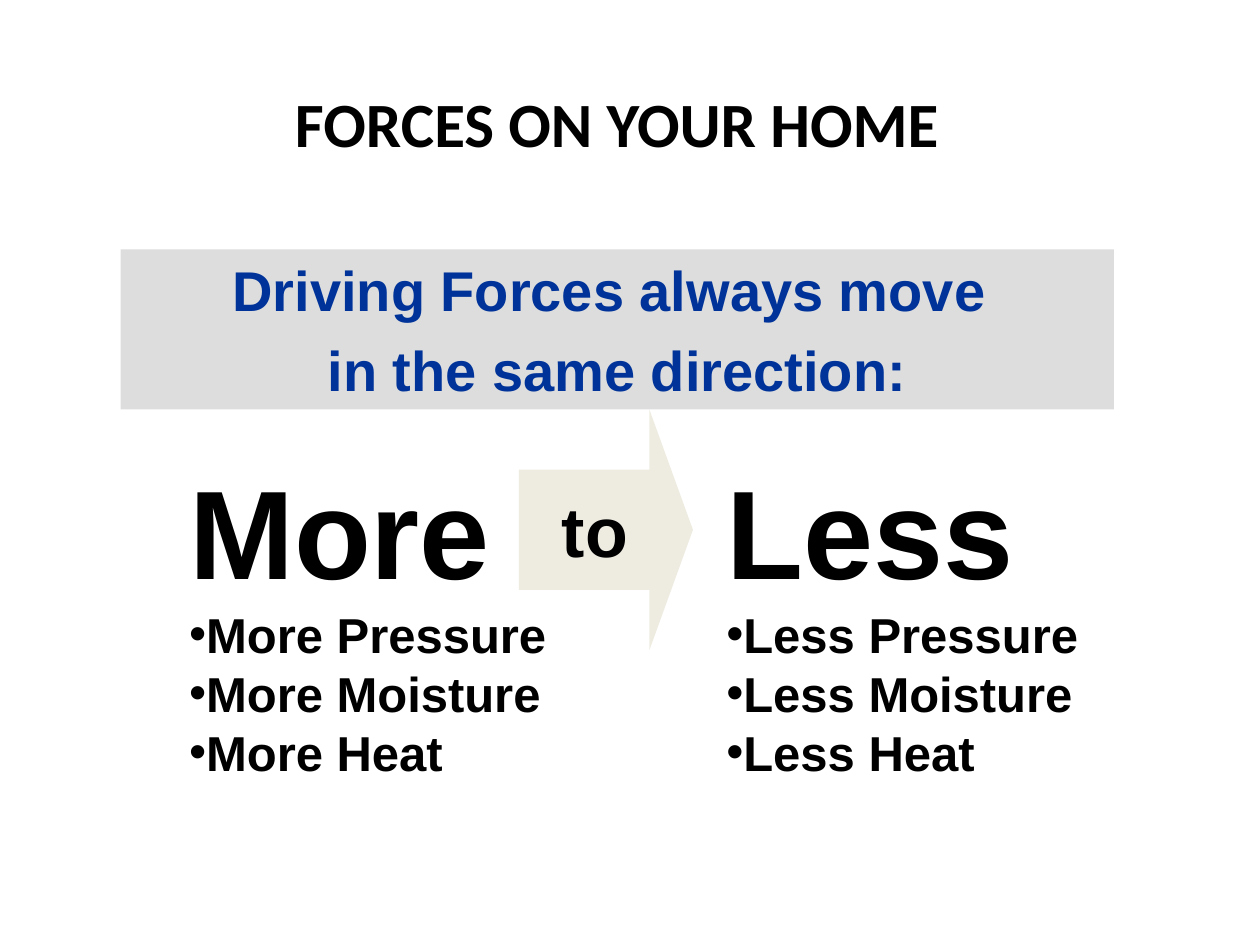
"""Build the slide on how driving forces move from more to less."""
from lxml import etree
from pptx import Presentation
from pptx.dml.color import RGBColor
from pptx.enum.shapes import MSO_SHAPE as Shape
from pptx.enum.text import MSO_ANCHOR as Anchor, PP_ALIGN as Align
from pptx.oxml.ns import qn
from pptx.util import Pt


def write(frame, text, size, color="000000", font="Arial", align=Align.CENTER,
          before=0, bullet=False, first=True):
    paragraph = frame.paragraphs[0] if first else frame.add_paragraph()
    paragraph.alignment = align
    paragraph.space_before = Pt(before)
    run = paragraph.add_run()
    run.text = text
    run.font.size, run.font.name, run.font.bold = Pt(size), font, True
    run.font.color.rgb = RGBColor.from_string(color)
    if bullet:
        properties = paragraph._p.get_or_add_pPr()
        properties.set("marL", "0")
        properties.set("indent", "0")
        etree.SubElement(properties, qn("a:buFont")).set("typeface", "Arial")
        etree.SubElement(properties, qn("a:buChar")).set("char", "•")


def add_block(kind, left, top, width, height, fill):
    block = slide.shapes.add_shape(kind, Pt(left), Pt(top), Pt(width), Pt(height))
    block.shadow.inherit = False
    block.fill.solid()
    block.fill.fore_color.rgb = RGBColor.from_string(fill)
    block.line.fill.background()
    block.text_frame.vertical_anchor = Anchor.MIDDLE
    return block


deck = Presentation()
deck.slide_width, deck.slide_height = Pt(720), Pt(540)
slide = deck.slides.add_slide(deck.slide_layouts[5])

title = slide.shapes.title
title.left, title.top, title.width, title.height = Pt(91.5), Pt(18), Pt(522), Pt(103.5)
title.text_frame.vertical_anchor = Anchor.MIDDLE
write(title.text_frame, "FORCES ON YOUR HOME", 36, font="Calibri")

for amount, left, width, wrap in (("More", 101, 221, False), ("Less", 408, 238, True)):
    column = slide.shapes.add_textbox(Pt(left), Pt(255.5), Pt(width), Pt(196)).text_frame
    column.word_wrap = wrap
    write(column, amount, 72, align=Align.LEFT)
    for force in ("Pressure", "Moisture", "Heat"):
        write(column, f"{amount} {force}", 28, align=Align.LEFT, bullet=True, first=False)

arrow = add_block(Shape.RIGHT_ARROW, 296.5, 234, 99.5, 137.5, "EEECE1")
arrow.adjustments[0], arrow.adjustments[1] = 0.5, 0.25
arrow.text_frame.word_wrap = False
write(arrow.text_frame, "to", 40, before=8)

banner = add_block(Shape.RECTANGLE, 69, 142.5, 567.5, 91.5, "DDDDDD")
banner.text_frame.word_wrap = True
write(banner.text_frame, "Driving Forces always move ", 32, "003399", before=7.4)
write(banner.text_frame, "in the same direction:", 32, "003399", before=7.4, first=False)

deck.save("out.pptx")
